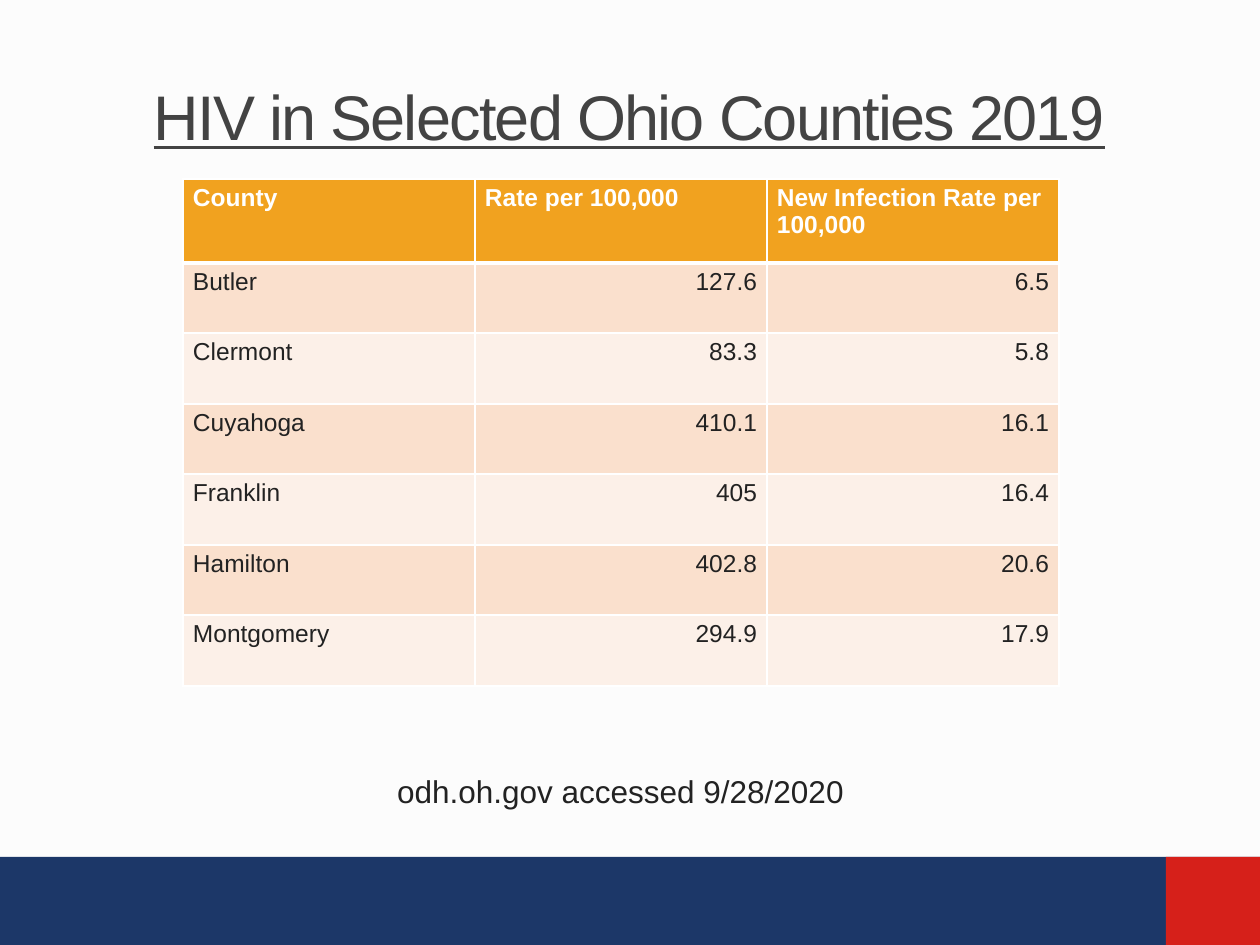
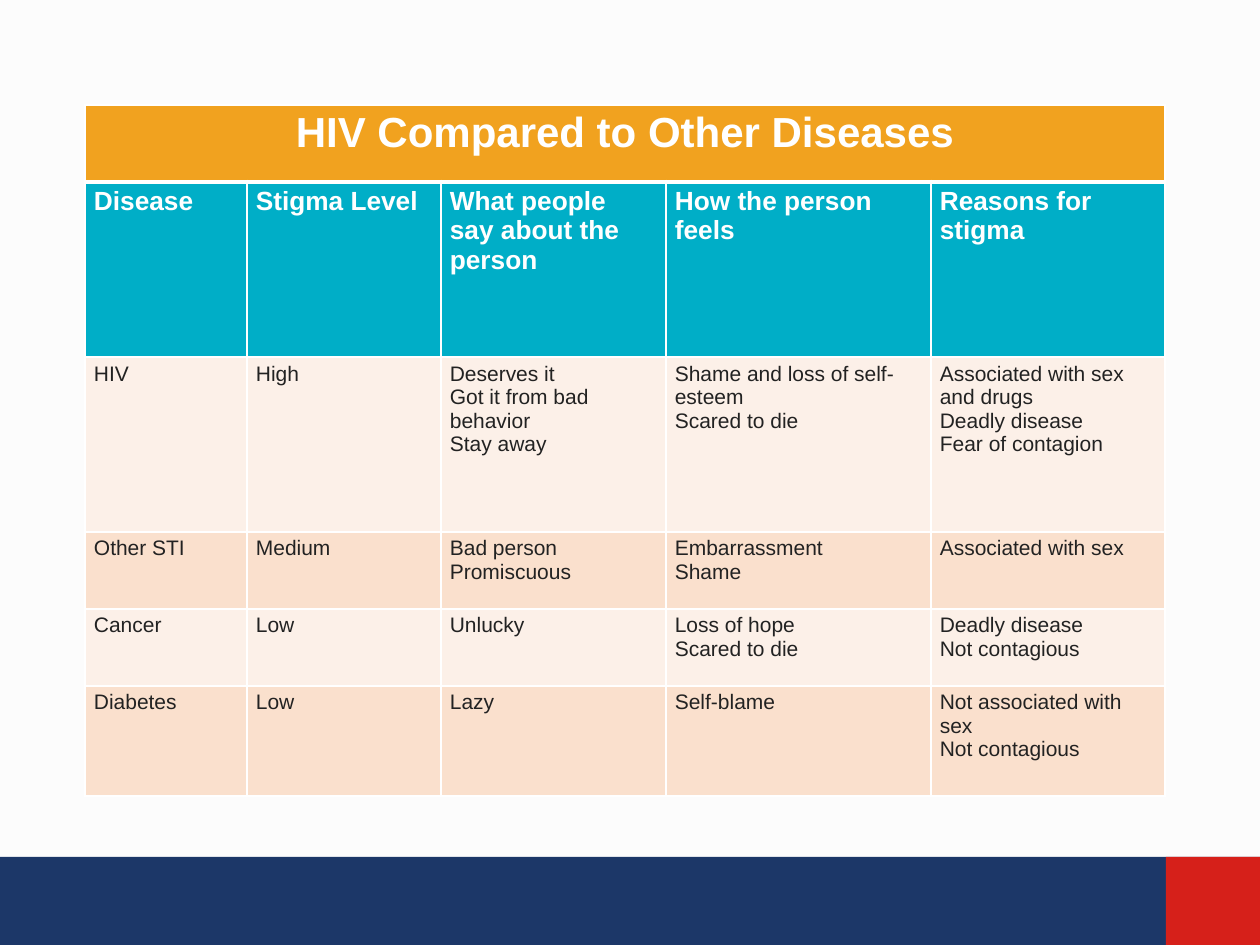
import dataclasses

import lxml.etree
import pptx
import pptx.dml.color
import pptx.enum.shapes
import pptx.enum.text
import pptx.oxml.ns
import pptx.presentation
import pptx.slide
import pptx.table
import pptx.text.text
import pptx.util

PX = 914400 / 126
FONT = "Arial"
COLORS = {
    "background": "FCFCFC",
    "navy": "1C3768",
    "red": "D6201A",
    "orange": "F1A21F",
    "teal": "00AEC7",
    "peach": "FAE0CD",
    "cream": "FCF0E8",
    "white": "FFFFFF",
    "title": "434343",
    "text": "222222",
}
ALIGN = pptx.enum.text.PP_ALIGN


@dataclasses.dataclass(frozen=True)
class Box:
    left: int
    top: int
    width: int
    height: int

    def emu(self) -> tuple[int, int, int, int]:
        return px(self.left), px(self.top), px(self.width), px(self.height)


@dataclasses.dataclass(frozen=True)
class Band:
    box: Box
    color: str


@dataclasses.dataclass(frozen=True)
class HeaderRow:
    fill: str
    size: int
    align: ALIGN = ALIGN.LEFT


@dataclasses.dataclass(frozen=True)
class Grid:
    left: int
    top: int
    columns: tuple[int, ...]
    rows: tuple[int, ...]
    headers: tuple[HeaderRow, ...]
    body_size: int
    side_inset: int
    values_align: ALIGN
    content: tuple[tuple[str, ...], ...]


FOOTER_BANDS = (
    Band(Box(0, 857, 1260, 88), "navy"),
    Band(Box(1166, 857, 94, 88), "red"),
)

COUNTY_RATES = Grid(
    left=183,
    top=179,
    columns=(292,) * 3,
    rows=(84, 70, 71, 70, 71, 70, 71),
    headers=(HeaderRow("orange", 14),),
    body_size=14,
    side_inset=10,
    values_align=ALIGN.RIGHT,
    content=(
        ("County", "Rate per 100,000", "New Infection Rate per 100,000"),
        ("Butler", "127.6", "6.5"),
        ("Clermont", "83.3", "5.8"),
        ("Cuyahoga", "410.1", "16.1"),
        ("Franklin", "405", "16.4"),
        ("Hamilton", "402.8", "20.6"),
        ("Montgomery", "294.9", "17.9"),
    ),
)

DISEASE_STIGMA = Grid(
    left=85,
    top=105,
    columns=(162, 194, 225, 265, 234),
    rows=(77, 175, 175, 77, 77, 110),
    headers=(HeaderRow("orange", 24, ALIGN.CENTER), HeaderRow("teal", 15)),
    body_size=12,
    side_inset=9,
    values_align=ALIGN.LEFT,
    content=(
        ("HIV Compared to Other Diseases",),
        ("Disease", "Stigma Level", "What people say about the person",
         "How the person feels", "Reasons for stigma"),
        ("HIV", "High", "Deserves it\nGot it from bad behavior\nStay away",
         "Shame and loss of self-esteem\nScared to die",
         "Associated with sex and drugs\nDeadly disease\nFear of contagion"),
        ("Other STI", "Medium", "Bad person\nPromiscuous",
         "Embarrassment\nShame", "Associated with sex"),
        ("Cancer", "Low", "Unlucky", "Loss of hope\nScared to die",
         "Deadly disease\nNot contagious"),
        ("Diabetes", "Low", "Lazy", "Self-blame",
         "Not associated with sex\nNot contagious"),
    ),
)


def px(length: int) -> int:
    return round(length * PX)


def rgb(name: str) -> pptx.dml.color.RGBColor:
    return pptx.dml.color.RGBColor.from_string(COLORS[name])


def style_text(frame: pptx.text.text.TextFrame, size: int, color: str,
               align: ALIGN, bold: bool = False) -> None:
    for paragraph in frame.paragraphs:
        paragraph.alignment = align
        paragraph.font.name = FONT
        paragraph.font.size = pptx.util.Pt(size)
        paragraph.font.bold = bold
        paragraph.font.color.rgb = rgb(color)


def add_footer(slide: pptx.slide.Slide) -> None:
    for band in FOOTER_BANDS:
        strip = slide.shapes.add_shape(
            pptx.enum.shapes.MSO_SHAPE.RECTANGLE, *band.box.emu())
        strip.shadow.inherit = False
        strip.fill.solid()
        strip.fill.fore_color.rgb = rgb(band.color)
        strip.line.fill.background()


def add_title(slide: pptx.slide.Slide, text: str, box: Box) -> None:
    title = slide.shapes.title
    title.left, title.top, title.width, title.height = box.emu()
    frame = title.text_frame
    frame.text = text
    frame.margin_top = px(16)
    frame.auto_size = pptx.enum.text.MSO_AUTO_SIZE.NONE
    frame.vertical_anchor = pptx.enum.text.MSO_ANCHOR.MIDDLE
    style_text(frame, 36, "title", ALIGN.LEFT)
    frame.paragraphs[0].font.underline = True
    frame.paragraphs[0].runs[0]._r.get_or_add_rPr().set("spc", "-100")


def add_caption(slide: pptx.slide.Slide, text: str, box: Box) -> None:
    frame = slide.shapes.add_textbox(*box.emu()).text_frame
    frame.word_wrap = True
    frame.text = text
    style_text(frame, 18, "text", ALIGN.CENTER)


def add_borders(cell: pptx.table._Cell, top: int, bottom: int) -> None:
    properties = cell._tc.get_or_add_tcPr()
    qn = pptx.oxml.ns.qn
    for side, points in (("L", 1), ("R", 1), ("T", top), ("B", bottom)):
        line = lxml.etree.SubElement(
            properties, qn(f"a:ln{side}"), w=str(pptx.util.Pt(points)))
        fill = lxml.etree.SubElement(line, qn("a:solidFill"))
        lxml.etree.SubElement(fill, qn("a:srgbClr"), val=COLORS["white"])


def add_grid(slide: pptx.slide.Slide, grid: Grid) -> None:
    box = Box(grid.left, grid.top, sum(grid.columns), sum(grid.rows))
    table = slide.shapes.add_table(
        len(grid.rows), len(grid.columns), *box.emu()).table
    for column, width in zip(table.columns, grid.columns):
        column.width = px(width)
    for row, height in zip(table.rows, grid.rows):
        row.height = px(height)

    for r, texts in enumerate(grid.content):
        header = grid.headers[r] if r < len(grid.headers) else None
        fill = header.fill if header else ("peach" if r % 2 else "cream")
        for c in range(len(grid.columns)):
            cell = table.cell(r, c)
            add_borders(cell, 3 if r == 1 else 1, 3 if r == 0 else 1)
            cell.fill.solid()
            cell.fill.fore_color.rgb = rgb(fill)
            cell.margin_left = cell.margin_right = px(grid.side_inset)
            cell.margin_top = cell.margin_bottom = px(5)
            if c >= len(texts):
                continue
            cell.text = texts[c]
            if header:
                style_text(cell.text_frame, header.size, "white",
                           header.align, bold=True)
            else:
                style_text(cell.text_frame, grid.body_size, "text",
                           grid.values_align if c else ALIGN.LEFT)
        if len(texts) == 1:
            table.cell(r, 0).merge(table.cell(r, len(grid.columns) - 1))


def add_slide(deck: pptx.presentation.Presentation,
              layout: str) -> pptx.slide.Slide:
    slide = deck.slides.add_slide(deck.slide_layouts.get_by_name(layout))
    add_footer(slide)
    return slide


def main() -> None:
    deck = pptx.Presentation()
    deck.slide_width, deck.slide_height = px(1260), px(945)
    background = deck.slide_master.background.fill
    background.solid()
    background.fore_color.rgb = rgb("background")

    counties = add_slide(deck, "Title Only")
    add_title(counties, "HIV in Selected Ohio Counties 2019",
              Box(141, 32, 993, 157))
    add_grid(counties, COUNTY_RATES)
    add_caption(counties, "odh.oh.gov accessed 9/28/2020",
                Box(321, 766, 599, 50))

    diseases = add_slide(deck, "Blank")
    add_grid(diseases, DISEASE_STIGMA)

    deck.save("out.pptx")


if __name__ == "__main__":
    main()
